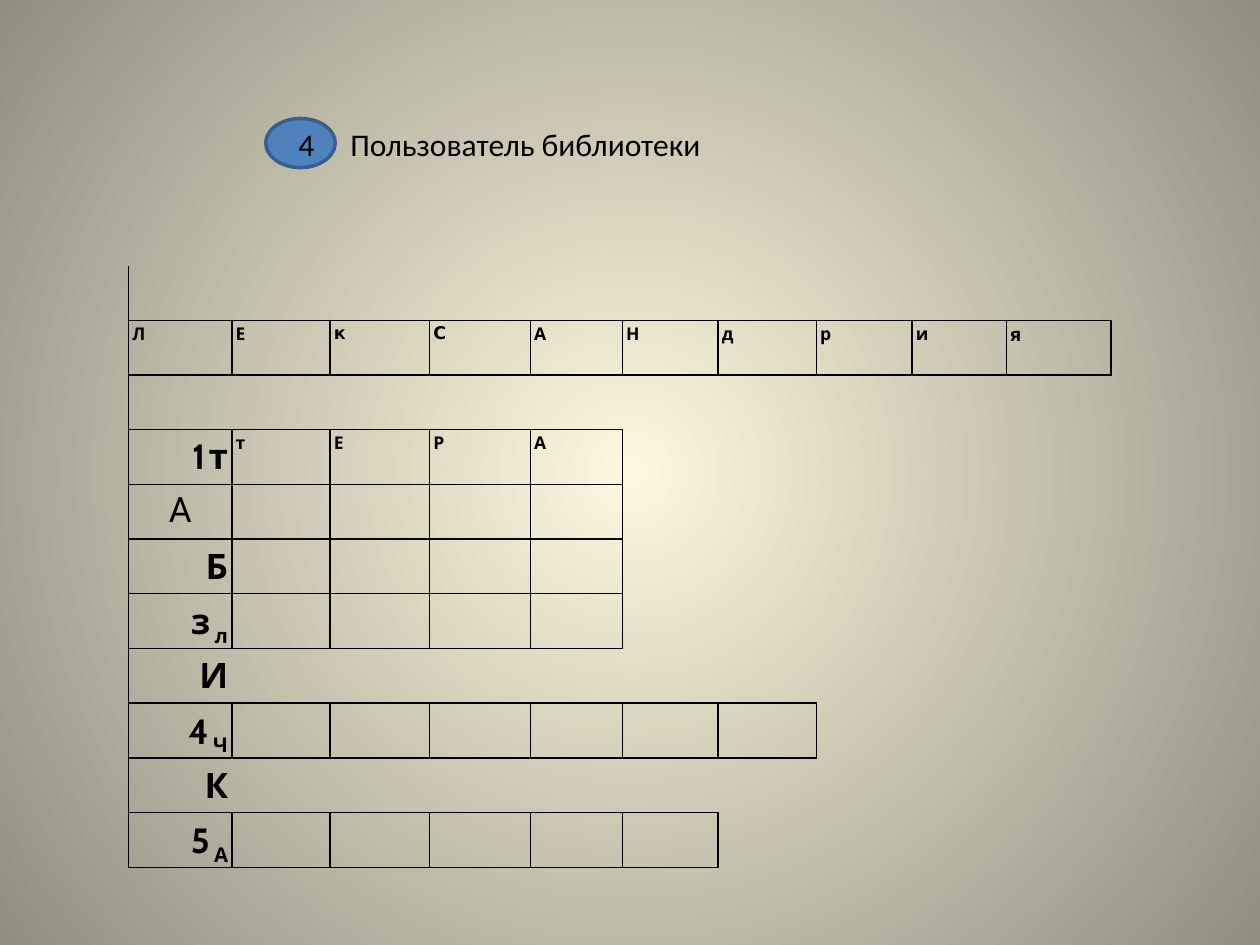
import pptx
import pptx.dml.color
import pptx.enum.shapes
import pptx.enum.text
import pptx.oxml
import pptx.oxml.ns
import pptx.util
from pptx.util import Inches

BLACK = pptx.dml.color.RGBColor(0x00, 0x00, 0x00)
CREAM = pptx.dml.color.RGBColor(0xFC, 0xF7, 0xDD)
STONE = pptx.dml.color.RGBColor(0x91, 0x8E, 0x81)
BLUE = pptx.dml.color.RGBColor(0x4F, 0x81, 0xBD)
DARK_BLUE = pptx.dml.color.RGBColor(0x3A, 0x5F, 0x8C)

LEFT = pptx.enum.text.PP_ALIGN.LEFT
CENTER = pptx.enum.text.PP_ALIGN.CENTER
RIGHT = pptx.enum.text.PP_ALIGN.RIGHT

COLUMN_WIDTHS = [0.82, 0.78, 0.79, 0.8, 0.73, 0.76, 0.78, 0.76, 0.75, 0.83]
ROW_COUNT = 11
# Number of boxed cells in each row that holds a word
WORD_LENGTHS = {1: 10, 3: 5, 4: 5, 5: 5, 6: 5, 8: 7, 10: 6}

# Letters of the solved words: (row, first column, letters)
ANSWERS = [(1, 0, "ЛЕкСАНдрия"), (3, 1, "тЕРА")]
# Font, size and letter spacing where they differ from Cabin 10
LETTER_STYLES = {"к": ("DejaVu Sans", 10, 0), "С": ("DejaVu Sans", 10, 0),
                 "я": ("Roboto", 11, 3.5)}
WIDE_LETTERS = "ЕАртР"
# Key column: row -> (text, subscript, letter spacing)
KEYS = {3: ("1т", "", 2), 5: ("Б", "", 2), 6: ("з", "л", 2.5), 7: ("И", "", 2),
        8: ("4", "Ч", 2.5), 9: ("К", "", 2.5), 10: ("5", "А", 2.5)}


def is_boxed(row, column):
    return 0 <= column < WORD_LENGTHS.get(row, 0)


class Page:
    def __init__(self, deck):
        self.slide = deck.slides.add_slide(deck.slide_layouts[6])

    def background(self, inner, outer):
        fill = self.slide.background.fill
        fill.gradient()
        for stop, color, position in zip(fill.gradient_stops, (inner, outer), (0, 1)):
            stop.color.rgb = color
            stop.position = position
        gradient = self.slide.element.find(".//" + pptx.oxml.ns.qn("a:gradFill"))
        gradient.remove(gradient.find(pptx.oxml.ns.qn("a:lin")))
        gradient.append(pptx.oxml.parse_xml(
            f'<a:path {pptx.oxml.ns.nsdecls("a")} path="circle">'
            '<a:fillToRect l="50000" t="50000" r="50000" b="50000"/></a:path>'))

    def span(self, para, text, font="Calibri", size=18, bold=False, spacing=0, subscript=False):
        span = para.add_run()
        span.text = text
        span.font.name = font
        span.font.size = pptx.util.Pt(size)
        span.font.bold = bold
        span.font.color.rgb = BLACK
        properties = span.font._element
        if spacing:
            properties.set("spc", str(int(spacing * 100)))
        if subscript:
            properties.set("baseline", "-25000")

    def text(self, left, top, width, height, text, inset=0.1):
        box = self.slide.shapes.add_textbox(
            Inches(left), Inches(top), Inches(width), Inches(height))
        box.text_frame.word_wrap = True
        box.text_frame.margin_left = Inches(inset)
        box.text_frame.margin_right = 0
        self.span(box.text_frame.paragraphs[0], text)

    def ellipse(self, left, top, width, height):
        shape = self.slide.shapes.add_shape(
            pptx.enum.shapes.MSO_SHAPE.OVAL,
            Inches(left), Inches(top), Inches(width), Inches(height))
        shape.shadow.inherit = False
        shape.fill.solid()
        shape.fill.fore_color.rgb = BLUE
        shape.line.color.rgb = DARK_BLUE
        shape.line.width = pptx.util.Pt(2)

    def borders(self, cell, edges):
        properties = cell._tc.get_or_add_tcPr()
        for side, drawn in edges.items():
            paint = (f'<a:solidFill><a:srgbClr val="{BLACK}"/></a:solidFill>'
                     if drawn else "<a:noFill/>")
            properties.append(pptx.oxml.parse_xml(
                f'<a:ln{side} {pptx.oxml.ns.nsdecls("a")} w="12700">{paint}</a:ln{side}>'))

    def grid(self, left, top, width, height):
        table = self.slide.shapes.add_table(
            ROW_COUNT, len(COLUMN_WIDTHS),
            Inches(left), Inches(top), Inches(width), Inches(height)).table
        table.first_row = False
        table.horz_banding = False
        for column, column_width in zip(table.columns, COLUMN_WIDTHS):
            column.width = Inches(column_width)
        for row in range(ROW_COUNT):
            for column in range(len(COLUMN_WIDTHS)):
                cell = table.cell(row, column)
                boxed = is_boxed(row, column)
                # An edge shows where a boxed cell lies on either side of it
                self.borders(cell, {
                    "L": column == 0 or boxed or is_boxed(row, column - 1),
                    "R": boxed or is_boxed(row, column + 1),
                    "T": boxed or is_boxed(row - 1, column),
                    "B": boxed or is_boxed(row + 1, column)})
                cell.fill.background()
        table.cell(0, 0).merge(table.cell(0, len(COLUMN_WIDTHS) - 1))
        return table

    def cell_paragraph(self, cell, align):
        cell.margin_left = cell.margin_right = Inches(0.03)
        cell.margin_top = cell.margin_bottom = 0
        para = cell.text_frame.paragraphs[0]
        para.alignment = align
        para.line_spacing = 1.15
        return para


def main():
    deck = pptx.Presentation()
    deck.slide_width, deck.slide_height = Inches(10), Inches(7.5)
    page = Page(deck)
    page.background(CREAM, STONE)

    # Clue with its number
    page.text(1.72, 0.94, 5.55, 0.4, "Пользователь библиотеки", inset=1.06)
    page.ellipse(2.11, 0.94, 0.55, 0.39)
    page.text(2.27, 0.94, 0.23, 0.4, "4")

    # Crossword grid
    table = page.grid(1.02, 2.11, 7.8, 4.77)

    # Solved words
    for row, first_column, letters in ANSWERS:
        for column, letter in enumerate(letters, first_column):
            para = page.cell_paragraph(table.cell(row, column), LEFT)
            spacing = 2.5 if letter in WIDE_LETTERS else 2
            font, size, spacing = LETTER_STYLES.get(letter, ("Cabin", 10, spacing))
            page.span(para, letter, font, size, True, spacing)

    # Key word down the first column
    for row, (text, subscript, spacing) in KEYS.items():
        para = page.cell_paragraph(table.cell(row, 0), RIGHT)
        page.span(para, text, "Cabin", 20, True, spacing)
        if subscript:
            page.span(para, subscript, "Cabin", 20, True, spacing, subscript=True)
    page.span(page.cell_paragraph(table.cell(4, 0), CENTER), "А", "Roboto", 20)

    deck.save("out.pptx")


if __name__ == "__main__":
    main()
